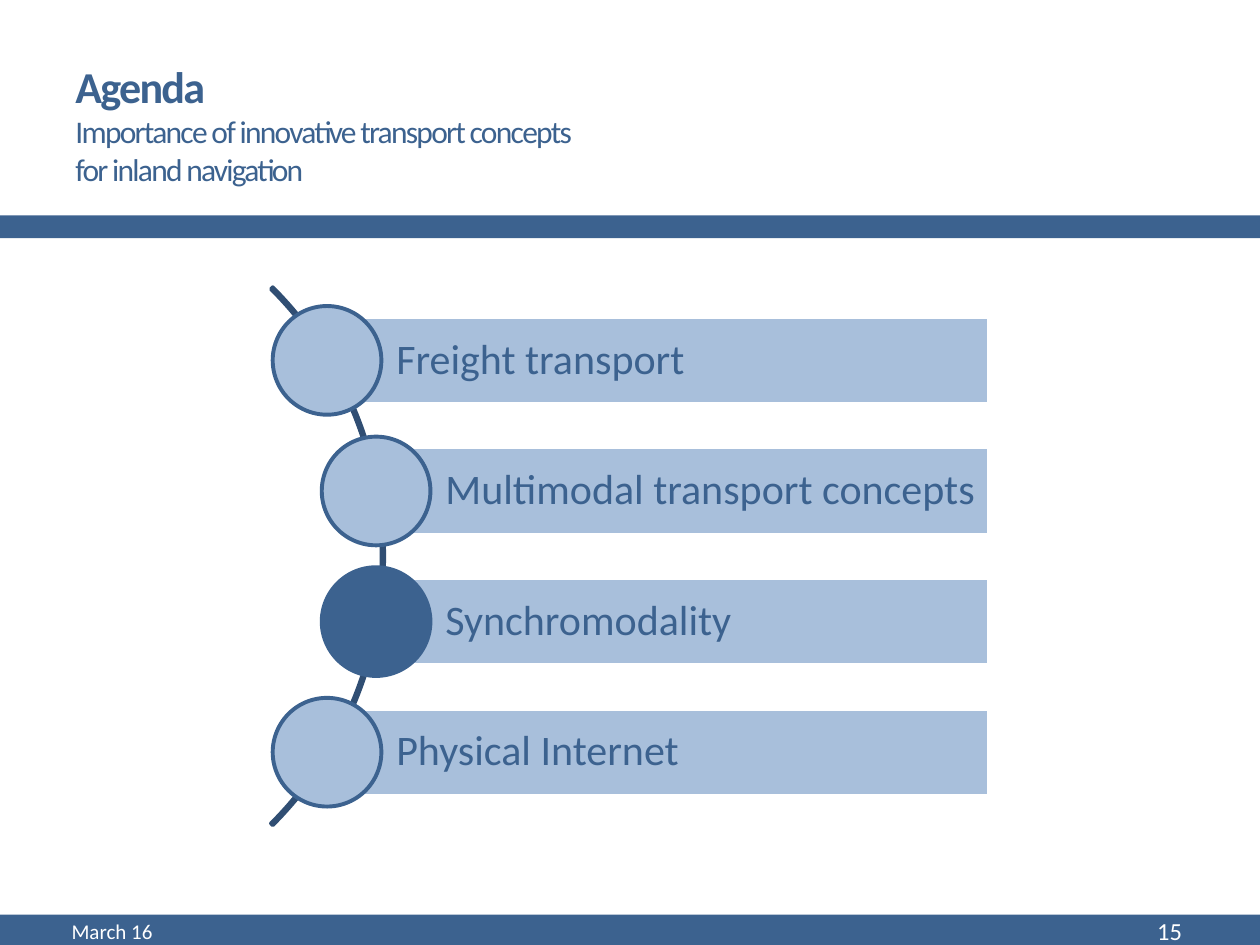
from math import sqrt

from pptx import Presentation
from pptx.dml.color import RGBColor
from pptx.enum.shapes import MSO_SHAPE
from pptx.enum.text import MSO_ANCHOR, PP_ALIGN
from pptx.util import Inches, Pt

RECTANGLE, OVAL, ARC = MSO_SHAPE.RECTANGLE, MSO_SHAPE.OVAL, MSO_SHAPE.BLOCK_ARC
MIDDLE = MSO_ANCHOR.MIDDLE
LEFT, RIGHT = PP_ALIGN.LEFT, PP_ALIGN.RIGHT
BLUE, LIGHT_BLUE, DARK_BLUE, WHITE = "3C628F", "A8BFDB", "304E73", "FFFFFF"
TOPICS = ["Freight transport", "Multimodal transport concepts",
          "Synchromodality", "Physical Internet"]
CURRENT_TOPIC = "Synchromodality"


def color(value):
    """Turn a hex string into a colour."""
    return RGBColor.from_string(value)


def add_shape(slide, kind, box, fill=None, line=None, line_width=2.08):
    """Add a flat shape in a box given in inches."""
    shape = slide.shapes.add_shape(kind, *map(Inches, box))
    shape.shadow.inherit = False
    if fill:
        shape.fill.solid()
        shape.fill.fore_color.rgb = color(fill)
    else:
        shape.fill.background()
    if line:
        shape.line.color.rgb = color(line)
        shape.line.width = Pt(line_width)
    else:
        shape.line.fill.background()
    return shape


def format_run(run, size, value, bold=False):
    """Set the font of one run."""
    run.font.name = "Calibri"
    run.font.size = Pt(size)
    run.font.bold = bold
    run.font.color.rgb = color(value)


def add_text(slide, box, text, size, value, alignment=LEFT):
    """Add a vertically centred text box and return its paragraph."""
    frame = slide.shapes.add_textbox(*map(Inches, box)).text_frame
    frame.word_wrap = True
    frame.vertical_anchor = MIDDLE
    frame.text = text
    paragraph = frame.paragraphs[0]
    paragraph.alignment = alignment
    for run in paragraph.runs:
        format_run(run, size, value)
    return paragraph


def add_header(slide, left, top, width, height):
    """Place the title and the rule below it."""
    add_shape(slide, RECTANGLE, (left, top + height - 0.18, width, 0.18), BLUE)
    title = "Agenda\vImportance of innovative transport concepts\vfor inland navigation"
    paragraph = add_text(slide, (left + 0.5, top + 0.44, 5.21, 1.08), title, 18, BLUE)
    format_run(paragraph.runs[0], 25.2, BLUE, bold=True)
    for run in paragraph.runs:
        run.font._element.set("spc", "-100")


def add_topic(slide, left, top, width, height, text):
    """Place one topic bar with a circle centred on its left end."""
    bar = add_shape(slide, RECTANGLE, (left, top, width, height), LIGHT_BLUE, WHITE)
    frame = bar.text_frame
    frame.word_wrap = True
    frame.vertical_anchor = MIDDLE
    frame.margin_left = Inches(0.55)
    frame.margin_right = frame.margin_top = frame.margin_bottom = Inches(0.07)
    frame.text = text
    paragraph = frame.paragraphs[0]
    paragraph.alignment = LEFT
    paragraph.line_spacing = 0.9
    format_run(paragraph.runs[0], 24, BLUE)
    diameter = 1.25 * height
    circle = (left - diameter / 2, top + (height - diameter) / 2, diameter, diameter)
    fill = BLUE if text == CURRENT_TOPIC else LIGHT_BLUE
    add_shape(slide, OVAL, circle, fill, BLUE, 2.25)


def add_agenda(slide, left, top, width, height):
    """Place the topics along an arc that bulges to the right."""
    arc_size, radius, bar_height = 6.04, 3, 0.69
    center_x, center_y = left - 2.13, top + height / 2
    arc = add_shape(slide, ARC, (center_x - arc_size / 2, center_y - arc_size / 2,
                                 arc_size, arc_size), line=DARK_BLUE)
    for index, value in enumerate((189, 27, 0.0036)):
        arc.adjustments[index] = value
    pitch = (height - 2 * 0.43) / (len(TOPICS) - 1)
    for index, topic in enumerate(TOPICS):
        offset = (index - (len(TOPICS) - 1) / 2) * pitch
        bar_left = center_x + sqrt(radius ** 2 - offset ** 2)
        add_topic(slide, bar_left, center_y + offset - bar_height / 2,
                  left + width - bar_left, bar_height, topic)


def add_footer(slide, left, top, width, height):
    """Place the footer band with date and page number."""
    add_shape(slide, RECTANGLE, (left, top, width, height), BLUE)
    text_top = top - 0.05
    add_text(slide, (left + 0.47, text_top, 3.17, 0.36), "March 16", 12, WHITE)
    add_text(slide, (left + width - 1.69, text_top, 1.17, 0.36), "15", 14, WHITE, RIGHT)


def main():
    """Build and save the agenda slide."""
    presentation = Presentation()
    presentation.slide_width = Inches(10)
    presentation.slide_height = Inches(7.5)
    slide = presentation.slides.add_slide(presentation.slide_layouts[6])
    add_header(slide, 0, 0, 10, 1.89)
    add_agenda(slide, 2.16, 2.43, 5.69, 3.97)
    add_footer(slide, 0, 7.26, 10, 0.24)
    presentation.save("out.pptx")


if __name__ == "__main__":
    main()
